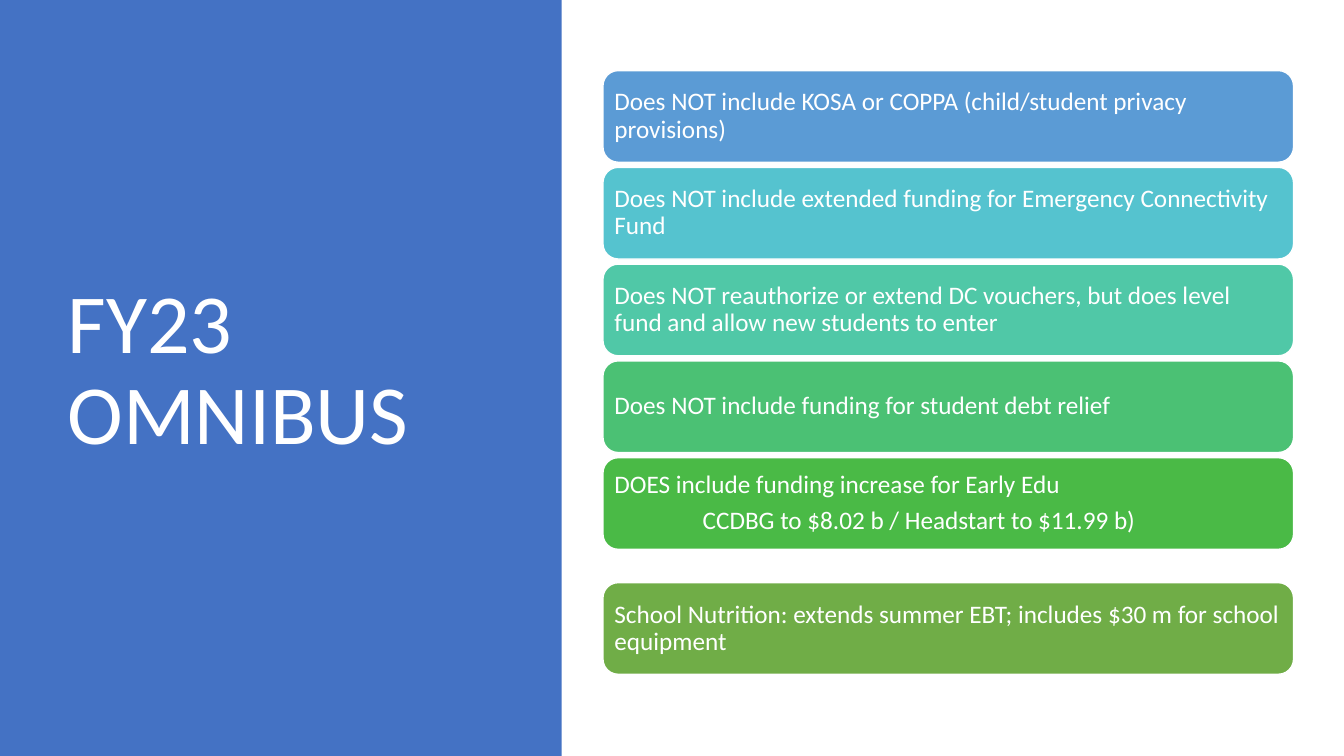
from dataclasses import dataclass

from lxml.etree import SubElement
from pptx import Presentation
from pptx.dml.color import RGBColor
from pptx.enum.shapes import MSO_SHAPE as Preset
from pptx.enum.text import MSO_ANCHOR as Anchor, MSO_AUTO_SIZE as AutoSize, PP_ALIGN as Align
from pptx.oxml.ns import qn
from pptx.shapes.autoshape import Shape
from pptx.text.text import TextFrame, _Paragraph as Paragraph
from pptx.util import Inches, Pt


@dataclass(frozen=True)
class Theme:
    font: str = "Calibri"
    white: str = "FFFFFF"
    panel: str = "4472C4"
    title_size: float = 60
    card_size: float = 18
    line_spacing: float = 0.9
    card_space_after: float = 6.3


@dataclass(frozen=True)
class Card:
    text: str
    fill: str
    gap_above: float = 0.0


THEME = Theme()
SLIDE_WIDTH, SLIDE_HEIGHT = 13.33, 7.5
PANEL_WIDTH = 5.57
CARD_LEFT, CARD_TOP = 5.98, 0.7
CARD_WIDTH, CARD_HEIGHT, CARD_PITCH = 6.85, 0.91, 0.96
CARD_INSET = 0.07
TAB_STOP = 0.875

CARDS = [
    Card("Does NOT include KOSA or COPPA (child/student privacy provisions)", "5B9BD5"),
    Card("Does NOT include extended funding for Emergency Connectivity Fund", "55C3CF"),
    Card("Does NOT reauthorize or extend DC vouchers, but does level fund "
         "and allow new students to enter", "50C8A7"),
    Card("Does NOT include funding for student debt relief", "4BC174"),
    Card("DOES include funding increase for Early Edu\n"
         "\tCCDBG to $8.02 b / Headstart to $11.99 b)", "4ABA46"),
    Card("School Nutrition: extends summer EBT; includes $30 m for school equipment",
         "70AD47", gap_above=0.28),
]


def add_tab_stop(paragraph: Paragraph, position: float) -> None:
    tab_list = SubElement(paragraph._p.get_or_add_pPr(), qn("a:tabLst"))
    SubElement(tab_list, qn("a:tab"), pos=str(Inches(position)), algn="l")


def write_text(frame: TextFrame, text: str, *, size: float,
               space_after: float = 0, inset: float | None = None) -> None:
    """Fill a frame with left-aligned, vertically centred text, one paragraph per line."""
    frame.word_wrap = True
    frame.auto_size = AutoSize.NONE
    frame.vertical_anchor = Anchor.MIDDLE
    if inset is not None:
        frame.margin_left = frame.margin_right = Inches(inset)
        frame.margin_top = frame.margin_bottom = Inches(inset)
    frame.text = text
    for paragraph in frame.paragraphs:
        paragraph.alignment = Align.LEFT
        paragraph.line_spacing = THEME.line_spacing
        paragraph.space_after = Pt(space_after)
        if paragraph.text.startswith("\t"):
            add_tab_stop(paragraph, TAB_STOP)
        for run in paragraph.runs:
            run.font.name = THEME.font
            run.font.size = Pt(size)
            run.font.color.rgb = RGBColor.from_string(THEME.white)


def add_block(shapes, preset: Preset, left: float, top: float,
              width: float, height: float, fill: str) -> Shape:
    shape = shapes.add_shape(preset, Inches(left), Inches(top), Inches(width), Inches(height))
    shape.shadow.inherit = False
    shape.fill.solid()
    shape.fill.fore_color.rgb = RGBColor.from_string(fill)
    shape.line.fill.background()
    return shape


def add_card(shapes, card: Card, top: float) -> None:
    shape = add_block(shapes, Preset.ROUNDED_RECTANGLE, CARD_LEFT, top,
                      CARD_WIDTH, CARD_HEIGHT, card.fill)
    shape.line.color.rgb = RGBColor.from_string(THEME.white)
    shape.line.width = Pt(1)
    write_text(shape.text_frame, card.text, size=THEME.card_size,
               space_after=THEME.card_space_after, inset=CARD_INSET)


def main() -> None:
    presentation = Presentation()
    presentation.slide_width = Inches(SLIDE_WIDTH)
    presentation.slide_height = Inches(SLIDE_HEIGHT)
    slide = presentation.slides.add_slide(presentation.slide_layouts.get_by_name("Title Only"))

    panel = add_block(slide.shapes, Preset.RECTANGLE, 0, 0,
                      PANEL_WIDTH, SLIDE_HEIGHT, THEME.panel)
    title = slide.shapes.title
    title.left, title.top = Inches(0.57), Inches(0.68)
    title.width, title.height = Inches(4.16), Inches(6.02)
    write_text(title.text_frame, "FY23 OMNIBUS", size=THEME.title_size)
    panel.element.addnext(title.element)  # the title sits in front of the panel

    card_group = slide.shapes.add_group_shape()
    top = CARD_TOP
    for card in CARDS:
        top += card.gap_above
        add_card(card_group.shapes, card, top)
        top += CARD_PITCH

    presentation.save("out.pptx")


if __name__ == "__main__":
    main()
